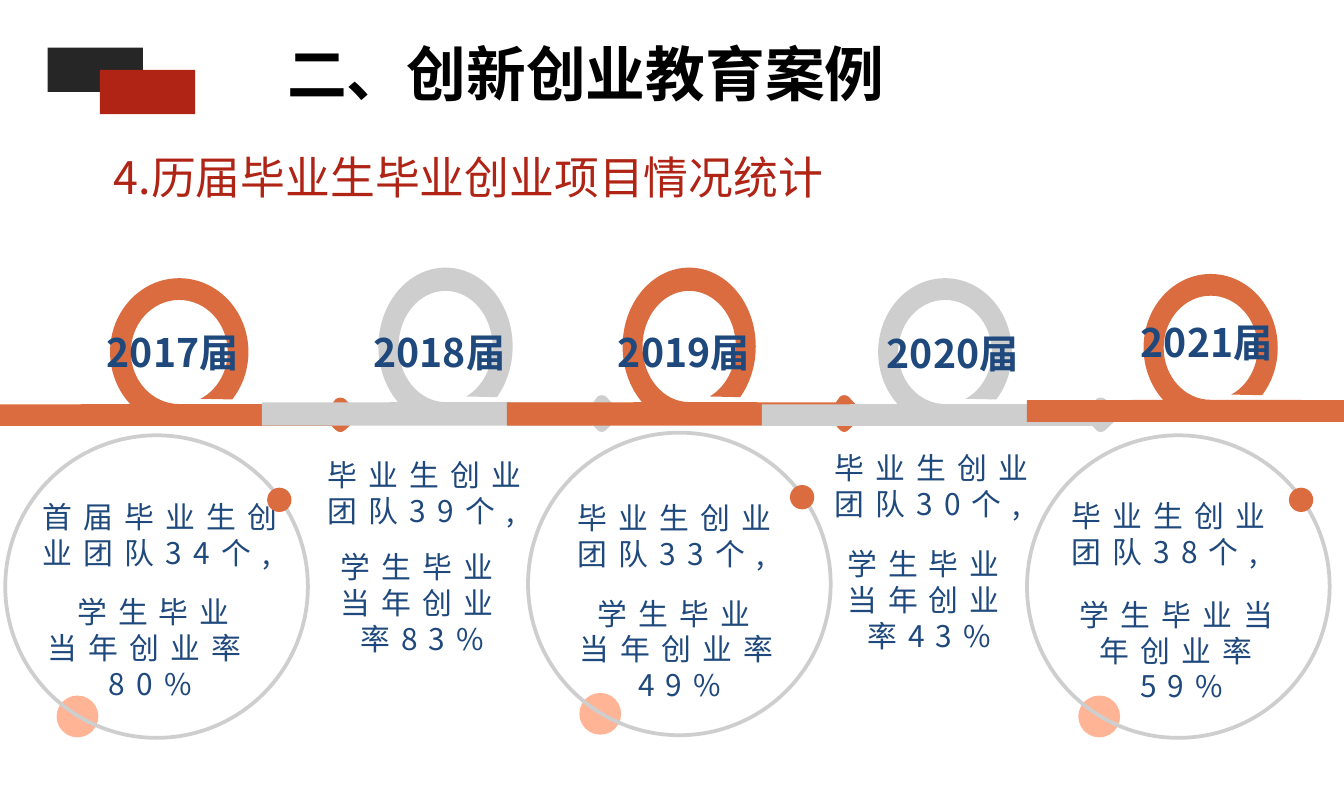
import math
from dataclasses import dataclass

from lxml import etree
from pptx import Presentation
from pptx.dml.color import RGBColor
from pptx.enum import shapes, text
from pptx.oxml.ns import qn
from pptx.util import Cm, Pt

FONT = "Noto Sans CJK SC"
ORANGE, GREY, PEACH = "DB6C3F", "CECECE", "FFB495"
NAVY, RED, DARK, BLACK = "1F497D", "B02416", "262626", "000000"


@dataclass
class Cohort:
    year: int
    team: str
    rate: str
    ribbon: tuple      # left, top, width, height in cm
    label: tuple       # left, top
    team_box: tuple    # left, top, width
    rate_box: tuple    # left, top, width
    ring: tuple = ()   # left, top; empty where there is no ring


COHORTS = [
    Cohort(2017, "首届毕业生创业团队34个,", " 学生毕业当年创业率80%", (-0.19, 5.26, 6.99, 2.92),
           (1.77, 6.09), (0.56, 9.3, 5.51), (0.58, 11.1, 4.52), (0.1, 8.23)),
    Cohort(2018, "毕业生创业团队39个,", "学生毕业当年创业率83%", (4.95, 5.06, 6.78, 3.12),
           (6.81, 6.08), (5.94, 8.51, 4.67), (5.95, 10.25, 4.06)),
    Cohort(2019, "毕业生创业团队33个,", "学生毕业当年创业率49%", (9.58, 5.06, 6.73, 3.12),
           (11.43, 6.08), (10.67, 9.32, 4.67), (10.71, 11.13, 4.27), (9.98, 8.18)),
    Cohort(2020, "毕业生创业团队30个,", "学生毕业当年创业率43%", (14.4, 5.26, 6.76, 2.92),
           (16.51, 6.1), (15.52, 8.38, 4.47), (15.53, 10.19, 4.06)),
    Cohort(2021, "毕业生创业团队38个,", "学生毕业当年创业率59%", (19.41, 5.18, 6.78, 2.92),
           (21.31, 5.9), (20, 9.28, 4.67), (20, 11.15, 4.67), (19.41, 8.23)),
]


def colour(value):
    return RGBColor.from_string(value)


def paint(shape, fill=None, line=None):
    shape.shadow.inherit = False
    if fill:
        shape.fill.solid()
        shape.fill.fore_color.rgb = colour(fill)
    else:
        shape.fill.background()
    if line:
        shape.line.color.rgb = colour(line)
        shape.line.width = Pt(2)
    else:
        shape.line.fill.background()


def add_preset(page, kind, left, top, width, height, **style):
    shape = page.shapes.add_shape(kind, Cm(left), Cm(top), Cm(width), Cm(height))
    paint(shape, **style)


def set_text(box, words, size, ink, bold=False, align=text.PP_ALIGN.LEFT, spacing=0):
    frame = box.text_frame
    frame.text = words
    frame.word_wrap = True
    frame.auto_size = text.MSO_AUTO_SIZE.NONE
    frame.vertical_anchor = text.MSO_ANCHOR.TOP
    para = frame.paragraphs[0]
    para.alignment = align
    span = para.runs[0]
    span.font.size = Pt(size)
    span.font.bold = bold
    span.font.color.rgb = colour(ink)
    span.font.name = FONT
    # East Asian typeface and letter spacing
    properties = span.font._element
    etree.SubElement(properties, qn("a:ea"), typeface=FONT)
    if spacing:
        properties.set("spc", str(spacing * 100))


def add_text(page, left, top, width, height, words, size, ink, **style):
    box = page.shapes.add_textbox(Cm(left), Cm(top), Cm(width), Cm(height))
    set_text(box, words, size, ink, **style)


def arc(radius_x, radius_y, *stops):
    """Moves round the loop centre: a line to the first angle, then a curve to each next."""
    def place(x, y):
        return 0.512 + radius_x * x, 0.478 + radius_y * y

    angles = [math.radians(stop) for stop in stops]
    moves = [[place(math.cos(angles[0]), math.sin(angles[0]))]]
    for a, b in zip(angles, angles[1:]):
        pull = 4 / 3 * math.tan((b - a) / 4)
        moves.append([
            place(math.cos(a) - pull * math.sin(a), math.sin(a) + pull * math.cos(a)),
            place(math.cos(b) + pull * math.sin(b), math.sin(b) - pull * math.cos(b)),
            place(math.cos(b), math.sin(b))])
    return moves


def ribbon_moves():
    """Outline in fractions of the ribbon: one point is a line, three are a curve."""
    band = [[(0, 0.817)], [(0, 0.957)], [(0.924, 0.957)]]
    tip = [[(0.935, 0.983)], [(0.942, 1), (0.953, 1), (0.96, 0.983)],
           [(0.993, 0.913)], [(1, 0.896), (1, 0.878), (0.993, 0.861)],
           [(0.96, 0.783)], [(0.953, 0.77), (0.942, 0.77), (0.935, 0.783)],
           [(0.924, 0.817)]]
    inner = arc(0.131, 0.337, 90, 180, 270, 360, 424)
    outer = arc(0.187, 0.478, 40, 0, -90, -180, -225)
    return band + tip + inner + outer


def add_ribbon(page, left, top, width, height, fill):
    moves = ribbon_moves()
    points = [(Cm(left + x * width), Cm(top + y * height)) for move in moves for x, y in move]
    builder = page.shapes.build_freeform(*points[0])
    builder.add_line_segments(points[1:], close=True)
    shape = builder.convert_to_shape()
    # Join each group of three points into one Bézier curve
    lines = iter(list(shape._element.iter(qn("a:lnTo"))))
    for move in moves[1:]:
        group = [next(lines) for _ in move]
        if len(group) == 3:
            curve = etree.Element(qn("a:cubicBezTo"))
            group[0].addprevious(curve)
            for line in group:
                curve.append(line[0])
                line.getparent().remove(line)
    paint(shape, fill=fill)


def add_ring(page, left, top):
    oval = shapes.MSO_SHAPE.OVAL
    add_preset(page, oval, left + 0.97, top + 4.92, 0.79, 0.79, fill=PEACH)
    add_preset(page, oval, left, top, 5.72, 5.72, line=GREY)
    add_preset(page, oval, left + 4.95, top + 0.99, 0.46, 0.46, fill=ORANGE)


def add_cohort(page, cohort, fill):
    add_ribbon(page, *cohort.ribbon, fill)
    add_text(page, *cohort.label, 3.68, 1.14, f"{cohort.year}届", 21, NAVY, bold=True)
    add_text(page, *cohort.rate_box, 2.31, cohort.rate, 16, NAVY,
             align=text.PP_ALIGN.CENTER, spacing=6)
    add_text(page, *cohort.team_box, 1.63, cohort.team, 16, NAVY, spacing=6)
    if cohort.ring:
        add_ring(page, *cohort.ring)


def add_heading(page):
    rectangle = shapes.MSO_SHAPE.RECTANGLE
    add_preset(page, rectangle, 0.9, 0.9, 1.8, 0.84, fill=DARK)
    add_preset(page, rectangle, 1.89, 1.32, 1.8, 0.84, fill=RED)
    title = page.shapes.title
    title.left, title.top, title.width, title.height = Cm(5.17), Cm(0.56), Cm(11.94), Cm(1.63)
    set_text(title, "二、创新创业教育案例", 32, BLACK, bold=True)
    add_text(page, 1.9, 2.7, 20.75, 1.27, "4.历届毕业生毕业创业项目情况统计", 24, RED)


def main():
    deck = Presentation()
    deck.slide_width, deck.slide_height = Cm(25.4), Cm(15.01)
    page = deck.slides.add_slide(deck.slide_layouts[5])
    add_heading(page)
    # Timeline, with alternating ribbon colours
    for index, cohort in enumerate(COHORTS):
        add_cohort(page, cohort, GREY if index % 2 else ORANGE)
    deck.save("out.pptx")


if __name__ == "__main__":
    main()
